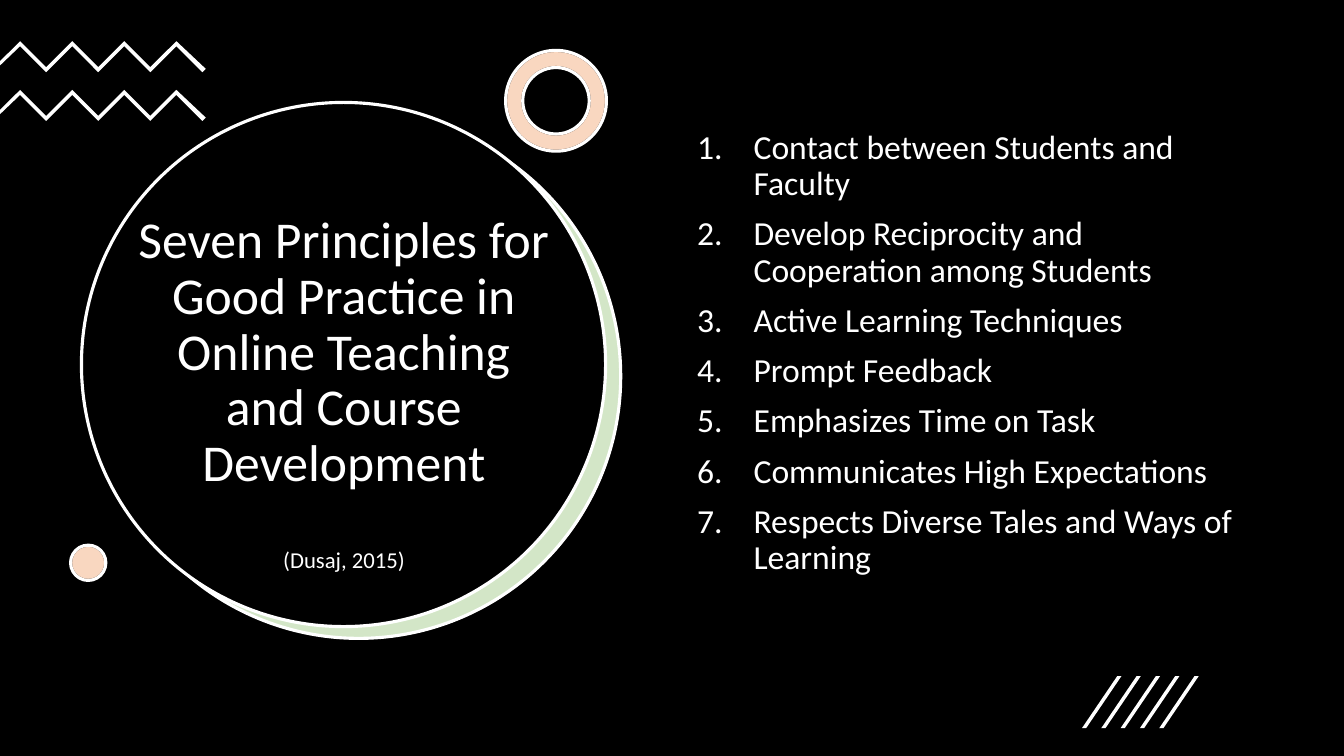
import pptx
import pptx.dml.color
import pptx.enum.shapes
import pptx.enum.text
import pptx.oxml.ns
import pptx.util
from lxml import etree

RGBColor = pptx.dml.color.RGBColor
BLACK = RGBColor(0x00, 0x00, 0x00)
WHITE = RGBColor(0xFF, 0xFF, 0xFF)
GREEN = RGBColor(0x70, 0xAD, 0x47)
ORANGE = RGBColor(0xED, 0x7D, 0x31)

FONT = "Calibri"
OVAL = pptx.enum.shapes.MSO_SHAPE.OVAL
DONUT = pptx.enum.shapes.MSO_SHAPE.DONUT
ALIGN = pptx.enum.text.PP_ALIGN
ANCHOR = pptx.enum.text.MSO_ANCHOR

# The slide is a grid of 16 columns by 9 rows of square cells
COLUMNS, ROWS = 16, 9
CELL = pptx.util.Inches(7.5) / ROWS

PRINCIPLES = [
    "Contact between Students and Faculty",
    "Develop Reciprocity and Cooperation among Students",
    "Active Learning Techniques",
    "Prompt Feedback",
    "Emphasizes Time on Task",
    "Communicates High Expectations",
    "Respects Diverse Tales and Ways of Learning",
]


def cells(*lengths):
    return [round(length * CELL) for length in lengths]


def add_round(page, kind, left, top, size, fill, line=None, opacity=None):
    """Add a disc or ring, with an optional outline and see-through fill."""
    shape = page.shapes.add_shape(kind, *cells(left, top, size, size))
    shape.shadow.inherit = False
    shape.fill.solid()
    shape.fill.fore_color.rgb = fill
    if opacity is not None:
        color = shape.element.spPr.find(".//" + pptx.oxml.ns.qn("a:srgbClr"))
        alpha = etree.SubElement(color, pptx.oxml.ns.qn("a:alpha"))
        alpha.set("val", str(opacity * 1000))
    if line is None:
        shape.line.fill.background()
    else:
        shape.line.color.rgb = line
        shape.line.width = pptx.util.Pt(2.25)
    if kind == DONUT:
        shape.adjustments[0] = 0.17


def add_tinted(page, kind, left, top, size):
    """Lay an orange tint over a white base."""
    add_round(page, kind, left, top, size, WHITE, BLACK)
    add_round(page, kind, left, top, size, ORANGE, WHITE, 30)


def add_outline(page, points):
    """Add a white closed polygon through points given in cells."""
    start, *rest = [cells(*point) for point in points]
    builder = page.shapes.build_freeform(*start, scale=1.0)
    builder.add_line_segments(rest, close=True)
    shape = builder.convert_to_shape()
    shape.shadow.inherit = False
    shape.fill.solid()
    shape.fill.fore_color.rgb = WHITE
    shape.line.fill.background()


def add_zigzag(page, left, top, step=0.31, thickness=0.06):
    """Draw a ribbon that enters at the left edge and turns seven times."""
    turns = [(left + 0.24 + step * i, top + step * (i % 2)) for i in range(7)]
    lower = [(x, y + thickness) for x, y in reversed(turns)]
    tip = [(left + 2.45, top + 0.33), (left + 2.41, top + 0.37)]
    tail = [(left, top + 0.29), (left, top + 0.24)]
    add_outline(page, turns + tip + lower + tail)


def add_stripes(page, left, top, width, height, count=5, pitch=0.23):
    """Draw a row of slanted stripes."""
    for i in range(count):
        x = left + i * pitch
        add_outline(page, [(x + 0.05, top + height), (x, top + height),
                           (x + width - 0.05, top), (x + width, top)])


def add_title_circle(page, left, top, size):
    """Draw the black disc with its green crescent."""
    add_round(page, OVAL, left + 0.19, top + 0.15, size, WHITE)
    add_round(page, OVAL, left + 0.18, top + 0.14, size, GREEN, WHITE, 30)
    add_round(page, OVAL, left, top, size, BLACK, WHITE)


def place(box, left, top, width, height, anchor):
    """Move a placeholder to its cells and bring it to the front."""
    box.left, box.top, box.width, box.height = cells(left, top, width, height)
    frame = box.text_frame
    frame.word_wrap = True
    frame.auto_size = pptx.enum.text.MSO_AUTO_SIZE.NONE
    frame.vertical_anchor = anchor
    box.element.getparent().append(box.element)
    return frame


def format_para(para, size, align, space_before):
    para.alignment = align
    para.line_spacing = 0.9
    para.space_before = pptx.util.Pt(space_before)
    para.font.name = FONT
    para.font.size = pptx.util.Pt(size)
    para.font.color.rgb = WHITE


def fill_title(page, *area):
    frame = place(page.shapes.title, *area, ANCHOR.MIDDLE)
    heading = frame.paragraphs[0]
    heading.text = ("Seven Principles for Good Practice in "
                    "Online Teaching and Course Development")
    format_para(heading, 36.9, ALIGN.CENTER, 0)
    citation = frame.add_paragraph()
    citation.text = "(Dusaj, 2015)"
    format_para(citation, 16.2, ALIGN.CENTER, 40)


def fill_principles(page, *area):
    frame = place(page.placeholders[1], *area, ANCHOR.TOP)
    frame.text = "\n".join(PRINCIPLES)
    indent = pptx.util.Inches(0.56)
    for para in frame.paragraphs:
        settings = para._p.get_or_add_pPr()
        settings.set("marL", str(indent))
        settings.set("indent", str(-indent))
        number = etree.SubElement(settings, pptx.oxml.ns.qn("a:buAutoNum"))
        number.set("type", "arabicPeriod")
        format_para(para, 24, ALIGN.LEFT, 10)


def main():
    deck = pptx.Presentation()
    deck.slide_width, deck.slide_height = cells(COLUMNS, ROWS)
    page = deck.slides.add_slide(deck.slide_layouts[1])
    page.background.fill.solid()
    page.background.fill.fore_color.rgb = BLACK

    # Left side: circle, title and ornaments
    add_title_circle(page, 0.97, 1.22, 6.24)
    fill_title(page, 1.45, 2.46, 5.29, 4.45)
    for top in (0.49, 1.07):
        add_zigzag(page, 0, top)
    add_tinted(page, DONUT, 6.02, 0.6, 1.2)
    add_tinted(page, OVAL, 0.84, 6.49, 0.42)

    # Right side: numbered list and stripes
    fill_principles(page, 8.18, 1.49, 6.85, 5.71)
    add_stripes(page, 12.88, 8.05, 0.47, 0.62)

    deck.save("out.pptx")


if __name__ == "__main__":
    main()
